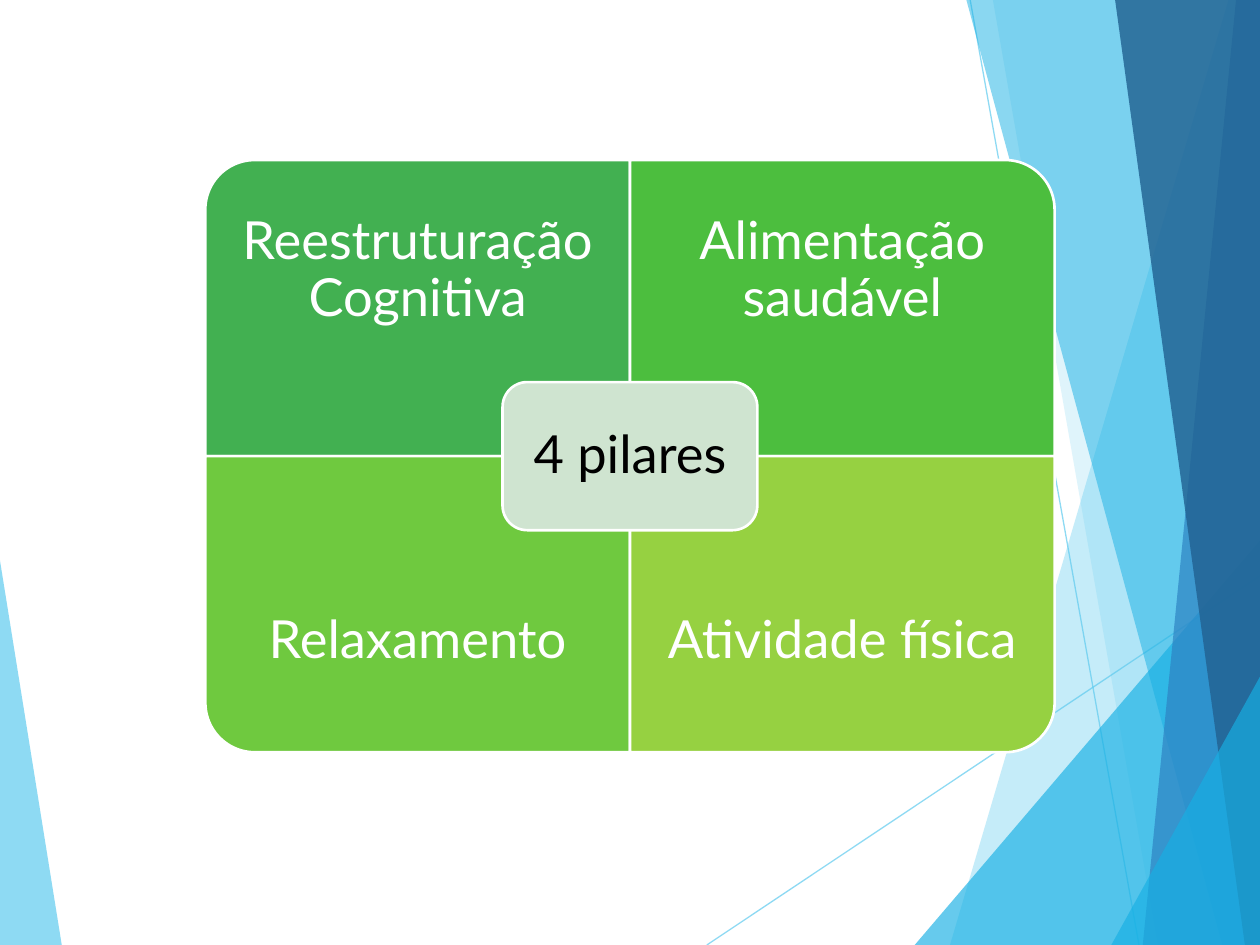
"""Build a slide with four green pillars around a centre label, over blue facets."""
from lxml.etree import SubElement
from pptx import Presentation
from pptx.dml.color import RGBColor
from pptx.enum.shapes import MSO_CONNECTOR, MSO_SHAPE
from pptx.enum.text import MSO_ANCHOR, PP_ALIGN
from pptx.oxml.ns import qn
from pptx.util import Inches, Pt

WIDTH, HEIGHT = 10, 7.5
FONT, FONT_SIZE = "Lato", 30
COLORS = {
    "sky": "5FCBEF", "cyan": "17B0E4", "blue": "2E83C3", "navy": "226292",
    "emerald": "42B051", "green": "4CBE3E", "grass": "6FC93F", "lime": "96D141",
    "mint": "CFE4D0", "white": "FFFFFF", "black": "000000",
}

PILLARS = [
    ("Reestruturação Cognitiva", "emerald", 270),
    ("Alimentação saudável", "green", 0),
    ("Relaxamento", "grass", 180),
    ("Atividade física", "lime", 90),
]
CENTRE_LABEL = "4 pilares"
CENTRE_X, CENTRE_Y = WIDTH / 2, 3.62
PILLAR_W, PILLAR_H = 3.37, 2.35
CAPTION_H = PILLAR_H * 0.75
LABEL_W, LABEL_H = PILLAR_W * 0.6, PILLAR_H / 2

LEFT_FACET = ("sky", 70, [(0, 4.45), (0.49, HEIGHT), (0, HEIGHT)])
RAYS = [((5.61, HEIGHT), (WIDTH, 4.57)), ((7.7, 0), (9.04, HEIGHT))]
RIGHT_FACETS = [
    ("sky", 36, 9.75, 0, 7.54),
    ("sky", 20, 7.88, 0, 9.19),
    ("cyan", 66, WIDTH, 4.29, 7.26),
    ("cyan", 50, 7.67, 0, 9.7),
    ("blue", 70, 9.81, 0, 9.07),
    ("navy", 82, 8.85, 0, 9.88),
    ("cyan", 66, WIDTH, 5.37, 8.82),
]


def rgb(name):
    return RGBColor.from_string(COLORS[name])


def set_opacity(element, percent):
    color = next(element.iter(qn("a:srgbClr")))
    SubElement(color, qn("a:alpha"), val=str(percent * 1000))


def add_facet(shapes, color, opacity, corners):
    start, *others = [(Inches(x), Inches(y)) for x, y in corners]
    builder = shapes.build_freeform(*start)
    builder.add_line_segments(others, close=True)
    facet = builder.convert_to_shape()
    facet.shadow.inherit = False
    facet.fill.solid()
    facet.fill.fore_color.rgb = rgb(color)
    facet.line.fill.background()
    set_opacity(facet.fill._xPr, opacity)


def add_ray(shapes, start, end):
    points = [Inches(value) for value in (*start, *end)]
    ray = shapes.add_connector(MSO_CONNECTOR.STRAIGHT, *points)
    ray.line.color.rgb = rgb("sky")
    ray.line.width = Pt(0.75)
    properties = ray._element.spPr
    set_opacity(properties, 70)
    SubElement(properties, qn("a:effectLst"))


def add_panel(shapes, preset, centre_x, centre_y, width, height, color):
    box = (centre_x - width / 2, centre_y - height / 2, width, height)
    panel = shapes.add_shape(preset, *map(Inches, box))
    panel.shadow.inherit = False
    panel.fill.solid()
    panel.fill.fore_color.rgb = rgb(color)
    panel.line.color.rgb = rgb("white")
    panel.line.width = Pt(1.5)
    return panel


def write_text(frame, text, color, inset):
    frame.text = text
    frame.word_wrap = True
    frame.vertical_anchor = MSO_ANCHOR.MIDDLE
    frame.margin_left = frame.margin_right = Inches(inset)
    frame.margin_top = frame.margin_bottom = Inches(inset)
    paragraph = frame.paragraphs[0]
    paragraph.alignment = PP_ALIGN.CENTER
    paragraph.line_spacing = 0.9
    font = paragraph.runs[0].font
    font.name, font.size = FONT, Pt(FONT_SIZE)
    font.color.rgb = rgb(color)


def add_pillar(shapes, index, text, color, rotation):
    row, column = divmod(index, 2)
    left = CENTRE_X + (column - 1) * PILLAR_W
    top = CENTRE_Y + (row - 1) * PILLAR_H
    size = (PILLAR_H, PILLAR_W) if rotation % 180 else (PILLAR_W, PILLAR_H)
    pillar = add_panel(shapes, MSO_SHAPE.ROUND_1_RECTANGLE,
                       left + PILLAR_W / 2, top + PILLAR_H / 2, *size, color)
    pillar.rotation = rotation
    caption_top = top + row * (PILLAR_H - CAPTION_H)
    caption = shapes.add_textbox(*map(Inches, (left, caption_top, PILLAR_W, CAPTION_H)))
    write_text(caption.text_frame, text, "white", 0.23)


def main():
    deck = Presentation()
    deck.slide_width, deck.slide_height = Inches(WIDTH), Inches(HEIGHT)
    shapes = deck.slides.add_slide(deck.slide_layouts[6]).shapes

    add_facet(shapes, *LEFT_FACET)
    for start, end in RAYS:
        add_ray(shapes, start, end)
    for color, opacity, top_x, top_y, bottom_x in RIGHT_FACETS:
        corners = [(top_x, top_y), (bottom_x, HEIGHT), (WIDTH, HEIGHT)]
        if top_x < WIDTH:
            corners.append((WIDTH, top_y))
        add_facet(shapes, color, opacity, corners)

    for index, pillar in enumerate(PILLARS):
        add_pillar(shapes, index, *pillar)
    label = add_panel(shapes, MSO_SHAPE.ROUNDED_RECTANGLE,
                      CENTRE_X, CENTRE_Y, LABEL_W, LABEL_H, "mint")
    write_text(label.text_frame, CENTRE_LABEL, "black", 0.12)
    deck.save("out.pptx")


if __name__ == "__main__":
    main()
